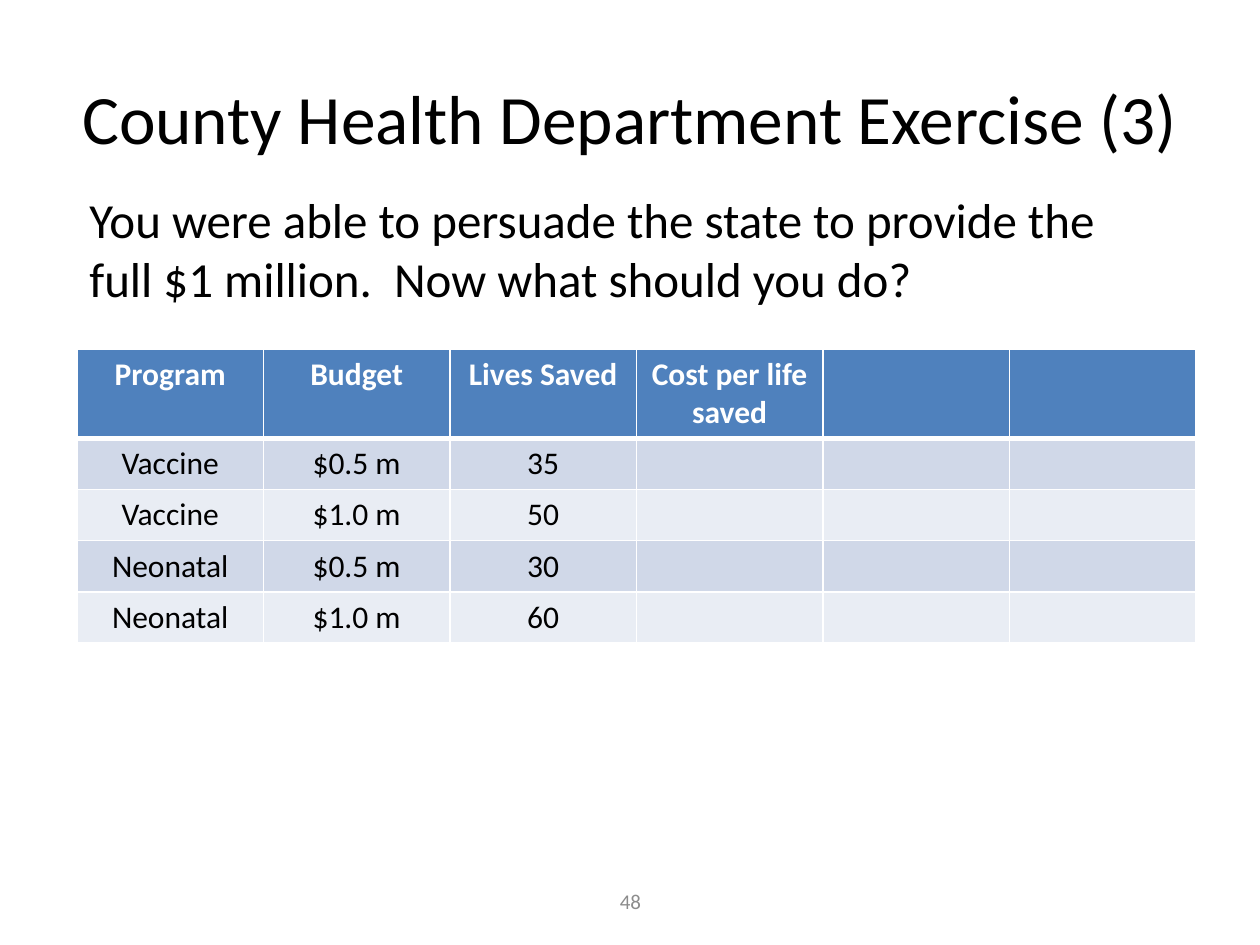
from dataclasses import dataclass

from lxml.etree import SubElement
from pptx import Presentation
from pptx.dml.color import RGBColor
from pptx.enum.text import MSO_ANCHOR, PP_ALIGN
from pptx.oxml.ns import qn
from pptx.util import Emu, Pt


@dataclass(frozen=True)
class Theme:
    font: str = "Calibri"
    ink: str = "000000"
    paper: str = "FFFFFF"
    muted: str = "8C8C8C"
    head: str = "4F81BD"
    bands: tuple = ("E9EDF4", "D0D8E8")
    title: float = 39.6
    body: int = 28
    cell: int = 18
    foot: int = 12


theme = Theme()


def px(count):
    """Turn slide pixels, 126 to the inch, into EMU."""
    return Emu(round(count * 914400 / 126))


def write(frame, text, size, color=theme.ink, bold=False,
          align=PP_ALIGN.CENTER, anchor=MSO_ANCHOR.MIDDLE):
    frame.word_wrap = True
    frame.vertical_anchor = anchor
    par = frame.paragraphs[0]
    par.alignment = align
    run = par.add_run()
    run.text = text
    run.font.name = theme.font
    run.font.size = Pt(size)
    run.font.bold = bold
    run.font.color.rgb = RGBColor.from_string(color)


deck = Presentation()
deck.slide_width, deck.slide_height = px(1260), px(945)
slide = deck.slides.add_slide(deck.slide_layouts[5])
shapes = slide.shapes

# Title
title = shapes.title
title.left, title.top, title.width, title.height = map(px, (63, 38, 1134, 157))
write(title.text_frame, "County Health Department Exercise (3)", theme.title)

# Program table
rows = [
    ("Program", "Budget", "Lives Saved", "Cost per life saved", "", ""),
    ("Vaccine", "$0.5 m", "35", "", "", ""),
    ("Vaccine", "$1.0 m", "50", "", "", ""),
    ("Neonatal", "$0.5 m", "30", "", "", ""),
    ("Neonatal", "$1.0 m", "60", "", "", ""),
]
grid = shapes.add_table(len(rows), len(rows[0]), *map(px, (77, 349, 1119, 293))).table
for r, row in enumerate(rows):
    top = r == 0
    grid.rows[r].height = px(89 if top else 51)
    for c, text in enumerate(row):
        cell = grid.cell(r, c)
        props = cell._tc.get_or_add_tcPr()
        for side in "LRTB":
            thick = (top and side == "B") or (r == 1 and side == "T")
            line = SubElement(props, qn(f"a:ln{side}"), w=str(Pt(3 if thick else 1)))
            fill = SubElement(line, qn("a:solidFill"))
            SubElement(fill, qn("a:srgbClr"), val=theme.paper)
        cell.fill.solid()
        shade = theme.head if top else theme.bands[r % 2]
        cell.fill.fore_color.rgb = RGBColor.from_string(shade)
        if text:
            write(cell.text_frame, text, theme.cell, bold=top, anchor=MSO_ANCHOR.TOP,
                  color=theme.paper if top else theme.ink)

# Page number
page = shapes.add_textbox(*map(px, (431, 876, 399, 50)))
write(page.text_frame, "48", theme.foot, color=theme.muted)

# Question
ask = shapes.add_textbox(*map(px, (77, 183, 1082, 131)))
write(ask.text_frame,
      "You were able to persuade the state to provide the full $1 million.  "
      "Now what should you do?",
      theme.body, align=PP_ALIGN.LEFT, anchor=MSO_ANCHOR.TOP)

deck.save("out.pptx")
